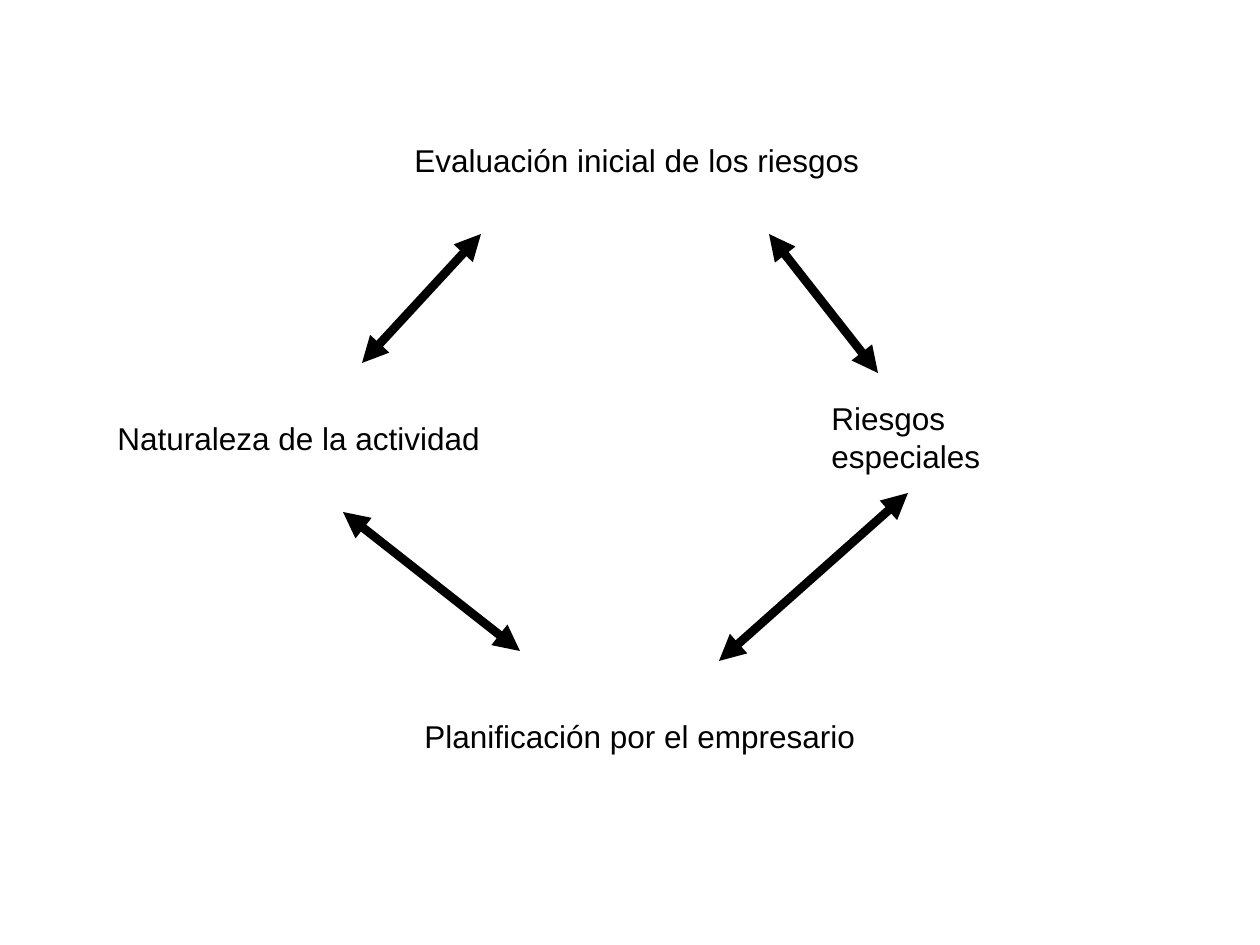
from lxml.etree import SubElement
from pptx import Presentation
from pptx.dml.color import RGBColor
from pptx.enum.shapes import MSO_CONNECTOR
from pptx.enum.text import MSO_AUTO_SIZE
from pptx.oxml.ns import qn
from pptx.util import Pt

PX = 914400 / 126
COLORS = {"background": "FFFFFF", "ink": "000000"}
LABEL_HEIGHT = 50
CYCLE_BOX = (105, 135, 1010, 626)

# Left, top and width, relative to the cycle box
STAGES = [
    ("Evaluación inicial de los riesgos", 297, 0, 470),
    ("Planificación por el empresario", 307, 576, 456),
    ("Naturaleza de la actividad", 0, 278, 388),
    ("Riesgos especiales", 714, 258, 296),
]
# Start and end points, relative to the cycle box
LINKS = [
    ((376, 99), (257, 228)),
    ((664, 99), (773, 238)),
    ((238, 377), (415, 516)),
    ((803, 358), (614, 526)),
]


def emu(*lengths):
    return [round(length * PX) for length in lengths]


def color(name):
    return RGBColor.from_string(COLORS[name])


def add_label(slide, text, left, top, width):
    label = slide.shapes.add_textbox(*emu(left, top, width, LABEL_HEIGHT))
    frame = label.text_frame
    frame.word_wrap = False
    frame.auto_size = MSO_AUTO_SIZE.SHAPE_TO_FIT_TEXT
    frame.text = text
    font = frame.paragraphs[0].font
    font.name = "Arial"
    font.size = Pt(18)
    font.color.rgb = color("ink")


def add_double_arrow(slide, start, end):
    arrow = slide.shapes.add_connector(MSO_CONNECTOR.STRAIGHT, *emu(*start, *end))
    arrow.line.color.rgb = color("ink")
    arrow.line.width = Pt(5)
    outline = arrow.line._get_or_add_ln()
    for tip in ("a:headEnd", "a:tailEnd"):
        SubElement(outline, qn(tip), type="triangle")
    SubElement(arrow._element.spPr, qn("a:effectLst"))


def add_cycle(slide, box):
    """Place the four stages and the two-way arrows between them."""
    x, y, _, _ = box
    for text, left, top, width in STAGES:
        add_label(slide, text, x + left, y + top, width)
    for (x1, y1), (x2, y2) in LINKS:
        add_double_arrow(slide, (x + x1, y + y1), (x + x2, y + y2))


def main():
    deck = Presentation()
    deck.slide_width, deck.slide_height = emu(1260, 945)
    slide = deck.slides.add_slide(deck.slide_layouts[6])
    slide.background.fill.solid()
    slide.background.fill.fore_color.rgb = color("background")
    add_cycle(slide, CYCLE_BOX)
    deck.save("out.pptx")


if __name__ == "__main__":
    main()
